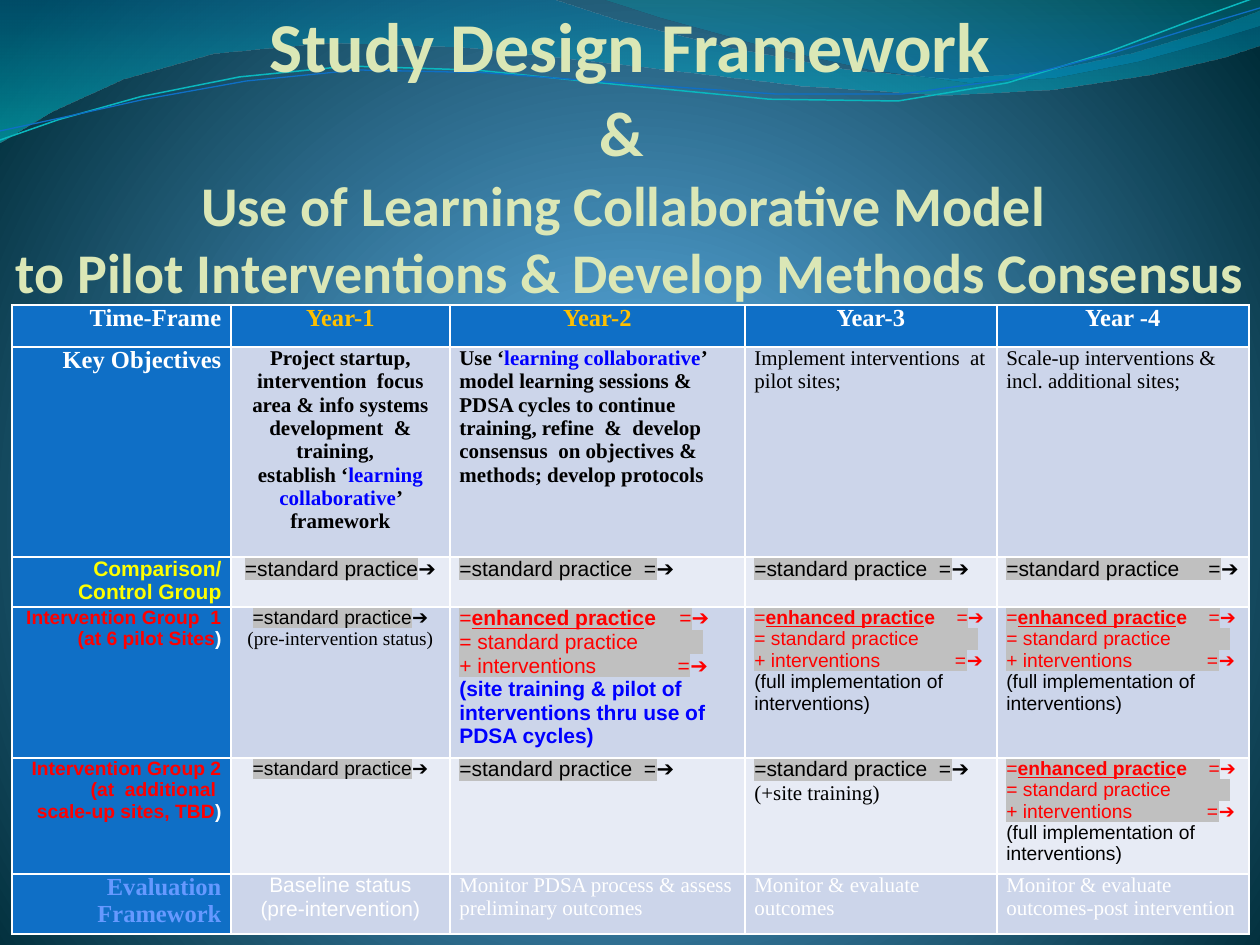
from copy import deepcopy
from dataclasses import dataclass, replace

from pptx import Presentation
from pptx.dml.color import RGBColor
from pptx.enum.text import MSO_ANCHOR, MSO_AUTO_SIZE, PP_ALIGN
from pptx.oxml import parse_xml
from pptx.oxml.ns import nsdecls, qn
from pptx.util import Emu, Pt

EMU_PER_PX = 914400 / 126
LEFT, CENTER, RIGHT = PP_ALIGN.LEFT, PP_ALIGN.CENTER, PP_ALIGN.RIGHT

WHITE = RGBColor(0xFF, 0xFF, 0xFF)
BLACK = RGBColor(0x00, 0x00, 0x00)
RED = RGBColor(0xFF, 0x00, 0x00)
BLUE = RGBColor(0x00, 0x00, 0xFF)
YELLOW = RGBColor(0xFF, 0xFF, 0x00)
GOLD = RGBColor(0xFF, 0xC0, 0x00)
PERIWINKLE = RGBColor(0x66, 0x99, 0xFF)
TITLE_GREEN = RGBColor(0xDB, 0xE7, 0xB6)
GREY = RGBColor(0xC0, 0xC0, 0xC0)
HEADER_BLUE = RGBColor(0x0F, 0x6F, 0xC6)
TEAL = RGBColor(0x0A, 0xB8, 0xBF)
BAND_DARK = RGBColor(0xCC, 0xD5, 0xEA)
BAND_LIGHT = RGBColor(0xE7, 0xEB, 0xF5)


@dataclass(frozen=True)
class Run:
    text: str
    size: int = 12
    color: RGBColor = BLACK
    font: str = "Arial"
    bold: bool = False
    underline: bool = False
    marked: bool = False


@dataclass(frozen=True)
class Cell:
    paragraphs: list[list[Run]]
    align: PP_ALIGN = LEFT


@dataclass(frozen=True)
class Wave:
    """Outline from start; pairs are straight lines, sextuples cubic curves."""
    start: tuple[int, int]
    segments: list[tuple[int, ...]]
    gradient: str = ""
    line: RGBColor | None = None
    width: float = 0.75


def px(n: float) -> Emu:
    return Emu(round(n * EMU_PER_PX))


def gradient_xml(stops: list[tuple[int, str, int]], direction: str) -> str:
    """Stops are (position %, colour, opacity %)."""
    gs = "".join(
        f'<a:gs pos="{pos}000"><a:srgbClr val="{color}"><a:alpha val="{alpha}000"/></a:srgbClr></a:gs>'
        for pos, color, alpha in stops)
    return f'<a:gradFill {nsdecls("a")} rotWithShape="1"><a:gsLst>{gs}</a:gsLst>{direction}</a:gradFill>'


def replace_solid_fill(parent, xml: str) -> None:
    parent.replace(parent.find(qn("a:solidFill")), parse_xml(xml))


def outline(wave: Wave, steps: int = 4) -> list[tuple[int, int]]:
    points = [wave.start]
    for seg in wave.segments:
        if len(seg) == 2:
            points.append(seg)
            continue
        x0, y0 = points[-1]
        x1, y1, x2, y2, x3, y3 = seg
        for t in (i / steps for i in range(1, steps + 1)):
            u = 1 - t
            a, b, c, d = u**3, 3 * u * u * t, 3 * u * t * t, t**3
            points.append((a * x0 + b * x1 + c * x2 + d * x3, a * y0 + b * y1 + c * y2 + d * y3))
    return [(px(x), px(y)) for x, y in points]


def draw_wave(shapes, wave: Wave) -> None:
    first, *rest = outline(wave)
    fb = shapes.build_freeform(*first)
    fb.add_line_segments(rest, close=bool(wave.gradient))
    sp = fb.convert_to_shape()
    sp.shadow.inherit = False
    if wave.gradient:
        sp.fill.solid()
        replace_solid_fill(sp._element.spPr, wave.gradient)
        sp.line.fill.background()
    else:
        sp.fill.background()
        sp.line.color.rgb = wave.line
        sp.line.width = Pt(wave.width)


def add_run(p, run: Run) -> None:
    """Adds the run, with a line break of the same size at each newline."""
    for i, text in enumerate(run.text.split("\n")):
        if i:
            p.add_line_break()
            p._p.findall(qn("a:br"))[-1].append(deepcopy(r._r.rPr))
        if not text:
            continue
        r = p.add_run()
        r.text = text
        f = r.font
        f.size, f.name, f.bold, f.underline = Pt(run.size), run.font, run.bold, run.underline
        f.color.rgb = run.color
        if run.marked:
            mark = parse_xml(f'<a:highlight {nsdecls("a")}><a:srgbClr val="{GREY}"/></a:highlight>')
            r._r.rPr.find(qn("a:solidFill")).addnext(mark)


def write(tf, paragraphs: list[list[Run]], align: PP_ALIGN) -> None:
    for i, runs in enumerate(paragraphs):
        p = tf.add_paragraph() if i else tf.paragraphs[0]
        p.alignment = align
        for run in runs:
            add_run(p, run)


def draw_cell(cell, content: Cell, fill: RGBColor) -> None:
    cell.fill.solid()
    cell.fill.fore_color.rgb = fill
    cell.margin_left = cell.margin_right = Pt(5.4)
    cell.margin_top = cell.margin_bottom = 0
    write(cell.text_frame, content.paragraphs, content.align)


def serif(text: str, size: int = 12, color: RGBColor = BLACK, bold: bool = False) -> Run:
    return Run(text, size, color, "Times New Roman", bold)


def heading(text: str, color: RGBColor = WHITE, align: PP_ALIGN = CENTER) -> Cell:
    return Cell([[serif(text, 14, color, True)]], align)


def standard(end: str = "  =", size: int = 12, align: PP_ALIGN = LEFT, note: Run | None = None) -> Cell:
    line = [Run("=standard practice" + end, size, marked=True), Run("➔", size)]
    return Cell([line] + ([[note]] if note else []), align)


def enhanced(note: Run) -> Cell:
    """Three highlighted lines, whose grey bars run on to the right, and a note."""
    plain = Run("=", note.size, RED, marked=True)
    strong = replace(plain, bold=True)
    arrow = replace(plain, text="➔", marked=False)
    return Cell([
        [plain, replace(strong, text="enhanced practic", underline=True),
         replace(strong, text="e    "), plain, arrow],
        [replace(plain, text="= standard practice".ljust(30))],
        [replace(plain, text="+ interventions".ljust(29) + "="), replace(arrow, text="➔\n"), note]])


def body(text: str, color: RGBColor = BLACK) -> Cell:
    return Cell([[serif(text, color=color)]])


DOWN = '<a:lin ang="5400000" scaled="1"/>'
WAVES = [
    Wave((0, 0), [(554, 0), (600, 21, 837, 79, 955, 79), (1075, 79, 1207, 33, 1260, 11), (1260, 45),
                  (1239, 55, 1096, 96, 940, 95), (784, 95, 481, 35, 324, 43), (163, 44, 58, 105, 0, 142)],
         gradient_xml([(0, "0074A1", 45), (100, "00C6CF", 55)], DOWN)),
    Wave((604, 0), [(641, 14, 859, 78, 969, 82), (1079, 87, 1211, 40, 1260, 26), (1260, 0)],
         gradient_xml([(0, "00A1A9", 30), (80, "008BBF", 45)], DOWN)),
    Wave((0, 140), [(60, 117, 199, 72, 349, 66), (498, 59, 747, 112, 898, 101),
                    (1050, 89, 1182, 19, 1257, -3)], line=TEAL, width=0.85),
    Wave((0, 131), [(59, 121, 207, 77, 357, 70), (508, 64, 752, 105, 903, 94),
                    (1053, 84, 1186, 26, 1260, 8)], line=HEADER_BLUE),
]

TITLE = [("Study Design Framework\n", 40), ("&", 36), (" \n", 40),
         ("Use of Learning Collaborative Model \nto Pilot Interventions & Develop Methods Consensus", 32)]

FULL = enhanced(Run("(full implementation of  interventions)", 11))
PILOT = enhanced(Run("(site training & pilot of interventions thru use of PDSA cycles)", 12, BLUE, bold=True))
COLLABORATIVE = serif("learning collaborative", color=BLUE, bold=True)
GROUP = Run("", 11, RED, bold=True)
GROUP_END = Run(")", 11, WHITE, bold=True)
COLUMNS = [219, 219, 295, 252, 252]
ROWS = [(42, [heading("Time-Frame", align=RIGHT), heading("Year-1", GOLD), heading("Year-2", GOLD),
              heading("Year-3"), heading("Year -4")]),
        (210, [heading("Key Objectives", align=RIGHT),
               Cell([[serif("Project startup, intervention  focus area & info systems development  & training,  ",
                            bold=True)],
                     [serif("establish ‘", bold=True), COLLABORATIVE, serif("’ framework", bold=True)]], CENTER),
               Cell([[serif("Use ‘", bold=True), COLLABORATIVE,
                      serif("’ model learning sessions & PDSA cycles to continue  training, refine  &  develop "
                            "consensus  on objectives & methods; develop protocols", bold=True)]]),
               body("Implement interventions  at pilot sites;"),
               body("Scale-up interventions & incl. additional sites;")]),
        (50, [Cell([[Run("Comparison/ Control Group", 12, YELLOW, bold=True)]], RIGHT),
              standard("", align=CENTER), standard(), standard(), standard("     =")]),
        (151, [Cell([[replace(GROUP, text="Intervention Group  1")],
                     [replace(GROUP, text="(at 6 pilot Sites"), GROUP_END]], RIGHT),
               standard("", 11, CENTER, serif("(pre-intervention status)", 11)), PILOT, FULL, FULL]),
        (116, [Cell([[replace(GROUP, text="Intervention Group 2\n(at  additional \nscale-up sites, TBD"),
                      GROUP_END]], RIGHT),
               standard("", 11, CENTER), standard(), standard(note=serif("(+site training)")), FULL]),
        (60, [heading("Evaluation Framework", PERIWINKLE, RIGHT),
              Cell([[Run("Baseline status\n(pre-intervention)", color=WHITE)]], CENTER),
              body("Monitor PDSA process & assess preliminary outcomes", WHITE),
              body("Monitor & evaluate  outcomes", WHITE),
              body("Monitor & evaluate  outcomes-post intervention", WHITE)])]
BANDS = [HEADER_BLUE, BAND_DARK, BAND_LIGHT, BAND_DARK, BAND_LIGHT, BAND_DARK]


def main() -> None:
    prs = Presentation()
    prs.slide_width, prs.slide_height = px(1260), px(945)
    s = prs.slides.add_slide(prs.slide_layouts[5])
    s.background.fill.solid()
    replace_solid_fill(s._element.find(".//" + qn("p:bgPr")), gradient_xml(
        [(0, "4AA0D6", 100), (25, "4C98C7", 100), (100, "002C38", 100)],
        '<a:path path="circle"><a:fillToRect l="10000" t="110000" r="10000" b="100000"/></a:path>'))
    for wave in WAVES:
        draw_wave(s.shapes, wave)

    title = s.shapes.title
    s.shapes._spTree.append(title._element)
    title.left, title.top, title.width, title.height = px(0), px(63), px(1260), px(242)
    tf = title.text_frame
    tf.auto_size, tf.word_wrap, tf.vertical_anchor = MSO_AUTO_SIZE.NONE, True, MSO_ANCHOR.BOTTOM
    tf.margin_left = tf.margin_right = tf.margin_top = tf.margin_bottom = 0
    write(tf, [[Run(text, size, TITLE_GREEN, "Calibri", True) for text, size in TITLE]], CENTER)

    table = s.shapes.add_table(len(ROWS), len(COLUMNS), px(12), px(305), px(sum(COLUMNS)),
                               px(sum(height for height, _ in ROWS))).table
    for column, width in zip(table.columns, COLUMNS):
        column.width = px(width)
    for i, ((height, cells), band) in enumerate(zip(ROWS, BANDS)):
        table.rows[i].height = px(height)
        for j, content in enumerate(cells):
            draw_cell(table.cell(i, j), content, band if j else HEADER_BLUE)
    prs.save("out.pptx")


if __name__ == "__main__":
    main()
